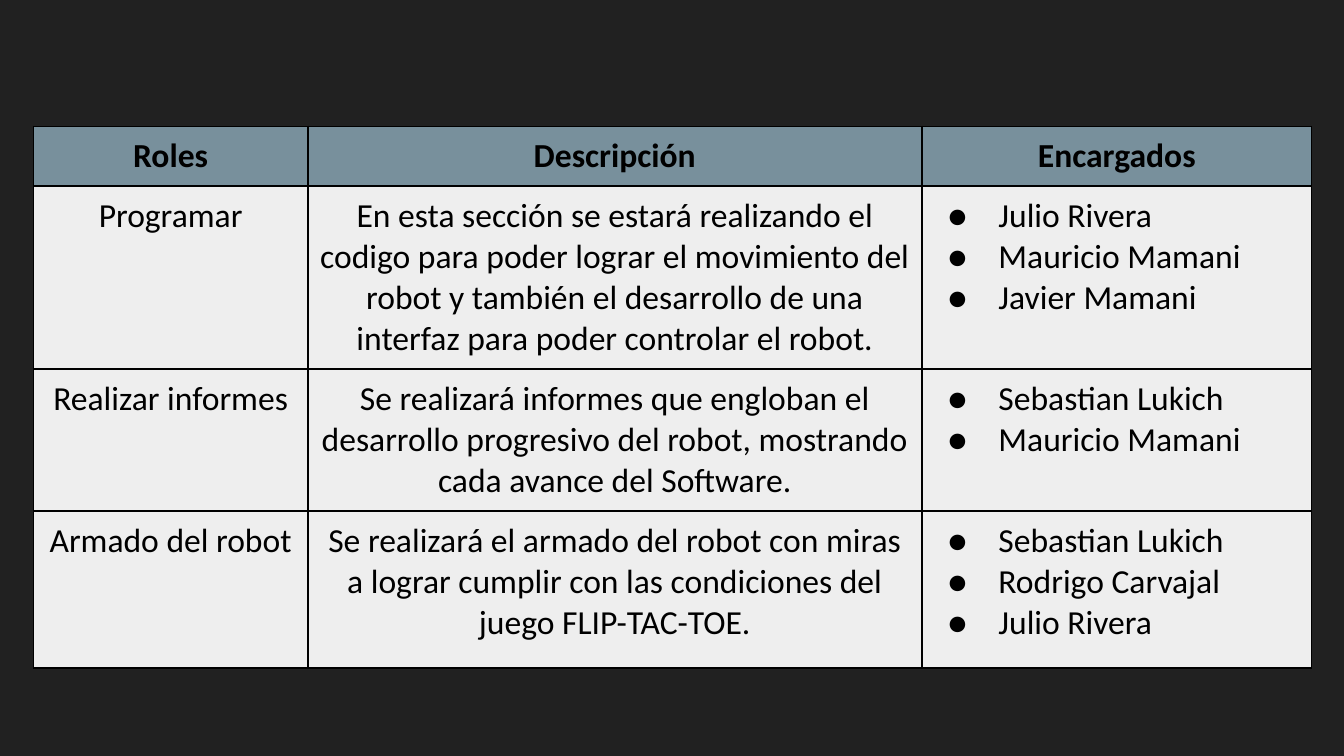
from pptx import Presentation
from pptx.dml.color import RGBColor as Color
from pptx.enum.text import PP_ALIGN as Align
from pptx.oxml import parse_xml
from pptx.oxml.ns import nsdecls
from pptx.util import Inches, Pt

COLORS = {
    "background": "212121",
    "header": "78909C",
    "body": "EEEEEE",
    "ink": "000000",
}
COLUMN_WIDTHS = [2.04, 4.57, 2.9]
ROW_HEIGHTS = [0.42, 1.27, 0.99, 1.17]
ROLES = [
    ("Roles", "Descripción", "Encargados"),
    (
        "Programar",
        "En esta sección se estará realizando el codigo para poder lograr el "
        "movimiento del robot y también el desarrollo de una interfaz para "
        "poder controlar el robot.",
        ["Julio Rivera", "Mauricio Mamani", "Javier Mamani"],
    ),
    (
        "Realizar informes",
        "Se realizará informes que engloban el desarrollo progresivo del robot, "
        "mostrando cada avance del Software.",
        ["Sebastian Lukich", "Mauricio Mamani"],
    ),
    (
        "Armado del robot",
        "Se realizará el armado del robot con miras a lograr cumplir con las "
        "condiciones del juego FLIP-TAC-TOE.",
        ["Sebastian Lukich", "Rodrigo Carvajal", "Julio Rivera"],
    ),
]


class SlideBuilder:
    """Hold the text style and the current slide, and draw its elements."""

    def __init__(self, slide, font="Calibri", size=18):
        self.slide = slide
        self.font = font
        self.size = size

    def background(self, color):
        fill = self.slide.background.fill
        fill.solid()
        fill.fore_color.rgb = Color.from_string(COLORS[color])

    def bullet(self, paragraph):
        properties = paragraph._p.get_or_add_pPr()
        properties.set("marL", str(Inches(0.5)))
        properties.set("indent", str(-Inches(0.38)))
        for xml in (
            f'<a:buClr {nsdecls("a")}><a:srgbClr val="{COLORS["ink"]}"/></a:buClr>',
            f'<a:buFont {nsdecls("a")} typeface="{self.font}"/>',
            f'<a:buChar {nsdecls("a")} char="●"/>',
        ):
            properties.append(parse_xml(xml))

    def borders(self, cell):
        properties = cell._tc.get_or_add_tcPr()
        for side in "LRTB":
            properties.append(parse_xml(
                f'<a:ln{side} {nsdecls("a")} w="{Pt(1)}"><a:solidFill>'
                f'<a:srgbClr val="{COLORS["ink"]}"/></a:solidFill></a:ln{side}>'
            ))

    def cell(self, cell, content, header):
        cell.margin_left = cell.margin_right = Inches(0.07)
        cell.margin_top = cell.margin_bottom = Inches(0.07)
        self.borders(cell)
        cell.fill.solid()
        cell.fill.fore_color.rgb = Color.from_string(
            COLORS["header" if header else "body"]
        )
        is_list = isinstance(content, list)
        cell.text_frame.text = "\n".join(content) if is_list else content
        for paragraph in cell.text_frame.paragraphs:
            if is_list:
                self.bullet(paragraph)
            else:
                paragraph.alignment = Align.CENTER
            for run in paragraph.runs:
                run.font.name = self.font
                run.font.size = Pt(self.size)
                run.font.bold = header
                run.font.color.rgb = Color.from_string(COLORS["ink"])

    def table(self, left, top, widths, heights, rows):
        shape = self.slide.shapes.add_table(
            len(heights), len(widths), Inches(left), Inches(top),
            Inches(sum(widths)), Inches(sum(heights)),
        )
        table = shape.table
        table.first_row = table.horz_banding = False
        for column, width in zip(table.columns, widths):
            column.width = Inches(width)
        for index, (row, height) in enumerate(zip(table.rows, heights)):
            row.height = Inches(height)
            for cell, content in zip(row.cells, rows[index]):
                self.cell(cell, content, header=index == 0)


def main():
    presentation = Presentation()
    presentation.slide_width = Inches(10)
    presentation.slide_height = Inches(10 * 9 / 16)
    slide = presentation.slides.add_slide(presentation.slide_layouts[6])
    builder = SlideBuilder(slide)
    builder.background("background")
    builder.table(0.25, 0.94, COLUMN_WIDTHS, ROW_HEIGHTS, ROLES)
    presentation.save("out.pptx")


if __name__ == "__main__":
    main()
